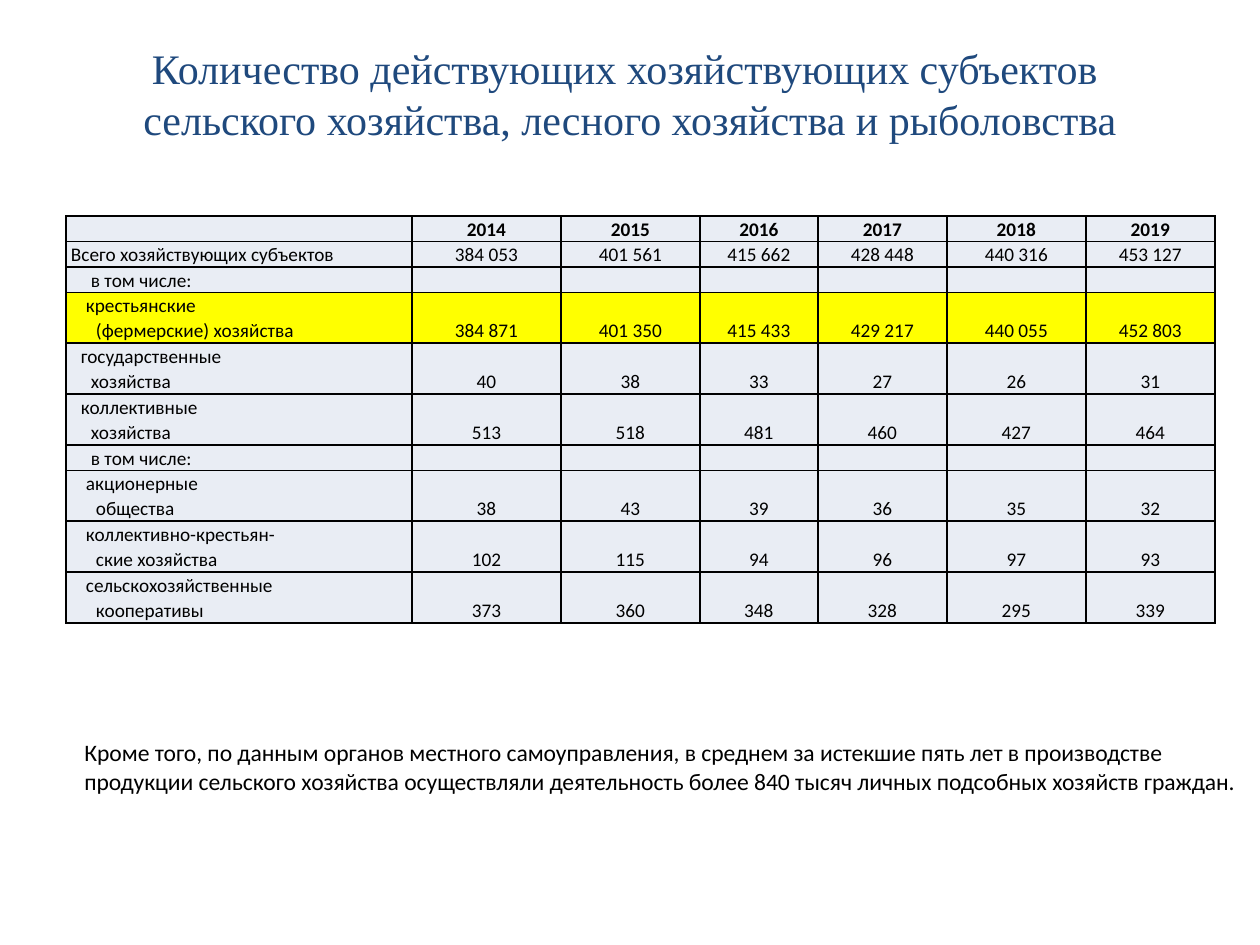
from dataclasses import dataclass

from lxml import etree
from pptx import Presentation
from pptx.dml.color import RGBColor
from pptx.enum.text import MSO_ANCHOR, MSO_AUTO_SIZE, PP_ALIGN
from pptx.oxml.ns import qn
from pptx.util import Emu, Pt

CENTER, LEFT = PP_ALIGN.CENTER, PP_ALIGN.LEFT
MIDDLE, BOTTOM = MSO_ANCHOR.MIDDLE, MSO_ANCHOR.BOTTOM
FIT_SHAPE, NO_FIT = MSO_AUTO_SIZE.SHAPE_TO_FIT_TEXT, MSO_AUTO_SIZE.NONE
EMU_PER_PX = 914400 / 126


@dataclass(frozen=True)
class Theme:
    title_font: str = "Times New Roman"
    body_font: str = "Calibri"
    title_size: float = 24
    table_size: float = 11
    note_size: float = 13.5
    title_color: str = "1F497D"
    ink: str = "000000"
    cell: str = "E9EDF4"
    highlight: str = "FFFF00"
    border: float = 1


THEME = Theme()

TITLE = ("Количество действующих хозяйствующих субъектов \v"
         "сельского хозяйства, лесного хозяйства и рыболовства")
YEARS = range(2014, 2020)
# Label, (left margin, first-line indent) in px, values by year
ROWS = [
    ("Всего хозяйствующих субъектов", (10, -10),
     [384053, 401561, 415662, 428448, 440316, 453127]),
    ("в том числе:", (20, 0), []),
    ("крестьянские\v(фермерские) хозяйства", (25, -10),
     [384871, 401350, 415433, 429217, 440055, 452803]),
    ("государственные\vхозяйства", (20, -10), [40, 38, 33, 27, 26, 31]),
    ("коллективные\vхозяйства", (20, -10), [513, 518, 481, 460, 427, 464]),
    ("в том числе:", (20, 0), []),
    ("акционерные\vобщества", (25, -10), [38, 43, 39, 36, 35, 32]),
    ("коллективно-крестьян-\vские хозяйства", (25, -10),
     [102, 115, 94, 96, 97, 93]),
    ("сельскохозяйственные \vкооперативы", (25, -10),
     [373, 360, 348, 328, 295, 339]),
]
HIGHLIGHTED_ROW = 3
COLUMN_WIDTHS = [346, 149, 139, 118, 129, 139, 129]
LINE_HEIGHT = 24
NOTE = ("Кроме того, по данным органов местного самоуправления, в среднем за "
        "истекшие пять лет в производстве продукции сельского хозяйства "
        "осуществляли деятельность более 840 тысяч личных подсобных хозяйств "
        "граждан.")


def px(length):
    return Emu(round(length * EMU_PER_PX))


def style(paragraph, font, size, color, align=LEFT, bold=False):
    paragraph.alignment = align
    paragraph.font.name = font
    paragraph.font.size = Pt(size)
    paragraph.font.bold = bold
    paragraph.font.color.rgb = RGBColor.from_string(color)


def add_borders(cell):
    properties = cell._tc.get_or_add_tcPr()
    for position, side in enumerate(("lnL", "lnR", "lnT", "lnB")):
        line = etree.Element(qn(f"a:{side}"), w=str(Pt(THEME.border)))
        fill = etree.SubElement(line, qn("a:solidFill"))
        etree.SubElement(fill, qn("a:srgbClr"), val=THEME.ink)
        properties.insert(position, line)


def fill_cell(cell, text, fill, align=CENTER, bold=False, indent=None):
    cell.margin_left = cell.margin_right = px(5)
    cell.margin_top = cell.margin_bottom = 0
    cell.vertical_anchor = BOTTOM
    cell.fill.solid()
    cell.fill.fore_color.rgb = RGBColor.from_string(fill)
    add_borders(cell)
    cell.text_frame.text = text
    paragraph = cell.text_frame.paragraphs[0]
    style(paragraph, THEME.body_font, THEME.table_size, THEME.ink, align, bold)
    paragraph.line_spacing = 1.07
    paragraph.space_before = paragraph.space_after = Pt(1)
    if indent:
        properties = paragraph._p.get_or_add_pPr()
        properties.set("marL", str(px(indent[0])))
        properties.set("indent", str(px(indent[1])))
    if not text:
        # An empty cell takes its line height from the end mark
        end_mark = paragraph._p.get_or_add_endParaRPr()
        end_mark.set("sz", str(THEME.table_size * 100))


def place_title(slide, left, top, width, height):
    title = slide.shapes.title
    title.left, title.top, title.width, title.height = map(
        px, (left, top, width, height))
    frame = title.text_frame
    frame.text = TITLE
    frame.auto_size = NO_FIT
    frame.vertical_anchor = MIDDLE
    frame.margin_bottom = px(54)
    style(frame.paragraphs[0], THEME.title_font, THEME.title_size,
          THEME.title_color, CENTER)


def add_farm_table(slide, left, top):
    line_counts = [1] + [label.count("\v") + 1 for label, _, _ in ROWS]
    table = slide.shapes.add_table(
        len(line_counts), len(COLUMN_WIDTHS), px(left), px(top),
        px(sum(COLUMN_WIDTHS)), px(sum(line_counts) * LINE_HEIGHT)).table
    for column, width in zip(table.columns, COLUMN_WIDTHS):
        column.width = px(width)
    for row, lines in zip(table.rows, line_counts):
        row.height = px(lines * LINE_HEIGHT)

    # Header of years
    fill_cell(table.cell(0, 0), "", THEME.cell)
    for column, year in enumerate(YEARS, 1):
        fill_cell(table.cell(0, column), str(year), THEME.cell, bold=True)

    # Kinds of farms
    for row, (label, indent, values) in enumerate(ROWS, 1):
        fill = THEME.highlight if row == HIGHLIGHTED_ROW else THEME.cell
        fill_cell(table.cell(row, 0), label, fill, LEFT, indent=indent)
        counts = [f"{value:,}".replace(",", " ") for value in values]
        for column, count in enumerate(counts or [""] * len(YEARS), 1):
            fill_cell(table.cell(row, column), count, fill)


def add_note(slide, left, top, width, height):
    note = slide.shapes.add_textbox(*map(px, (left, top, width, height)))
    frame = note.text_frame
    frame.word_wrap = True
    frame.auto_size = FIT_SHAPE
    frame.text = NOTE
    style(frame.paragraphs[0], THEME.body_font, THEME.note_size, THEME.ink)


def main():
    presentation = Presentation()
    presentation.slide_width, presentation.slide_height = px(1260), px(945)
    slide = presentation.slides.add_slide(presentation.slide_layouts[5])
    place_title(slide, 63, 38, 1134, 158)
    add_farm_table(slide, 66, 216)
    add_note(slide, 72, 732, 1176, 98)
    presentation.save("out.pptx")


if __name__ == "__main__":
    main()
